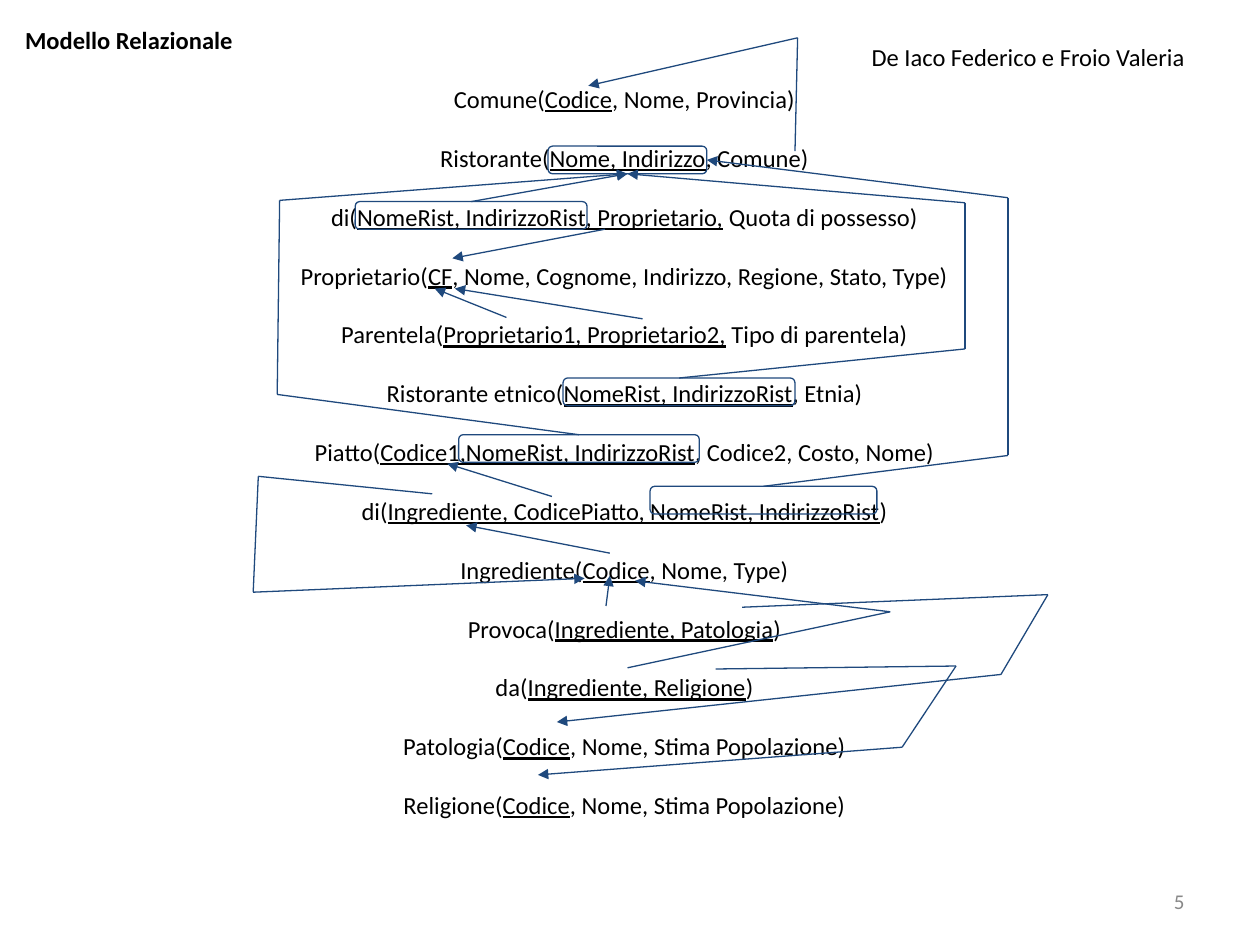
from dataclasses import dataclass
from typing import Optional

import pptx
import pptx.dml.color
import pptx.enum.shapes
import pptx.enum.text
import pptx.oxml
import pptx.oxml.ns
import pptx.util
from pptx.util import Pt

FONT = "Calibri"
INK = "1F497D"
LINE_WIDTH = 0.75
KEY_HEIGHT = 15.8
TOP, BOTTOM, RIGHT = 0, 2, 3
ALIGN = pptx.enum.text.PP_ALIGN
ANCHOR = pptx.enum.text.MSO_ANCHOR


@dataclass
class Relation:
    name: str
    key: str
    rest: str


@dataclass
class KeyFrame:
    left: float
    top: float
    width: float


@dataclass
class Reference:
    """A foreign key path; a frame name and site glue the path to a key frame."""
    points: list
    source: Optional[str] = None
    target: Optional[str] = None
    target_site: int = BOTTOM


RELATIONS = [
    Relation("Comune(", "Codice", ", Nome, Provincia)"),
    Relation("Ristorante(", "Nome, Indirizzo", ", Comune)"),
    Relation("di(", "NomeRist, IndirizzoRist, Proprietario,", " Quota di possesso)"),
    Relation("Proprietario(", "CF", ", Nome, Cognome, Indirizzo, Regione, Stato, Type)"),
    Relation("Parentela(", "Proprietario1, Proprietario2,", " Tipo di parentela)"),
    Relation("Ristorante etnico(", "NomeRist, IndirizzoRist", ", Etnia)"),
    Relation("Piatto(", "Codice1,NomeRist, IndirizzoRist", ", Codice2, Costo, Nome)"),
    Relation("di(", "Ingrediente, CodicePiatto, NomeRist, IndirizzoRist", ")"),
    Relation("Ingrediente(", "Codice", ", Nome, Type)"),
    Relation("Provoca(", "Ingrediente, Patologia", ")"),
    Relation("da(", "Ingrediente, Religione", ")"),
    Relation("Patologia(", "Codice", ", Nome, Stima Popolazione)"),
    Relation("Religione(", "Codice", ", Nome, Stima Popolazione)"),
]

KEY_FRAMES = {
    "ristorante": KeyFrame(313.2, 83.5, 90.7),
    "possesso": KeyFrame(203, 115.2, 132.5),
    "etnico": KeyFrame(321.8, 216, 132.5),
    "piatto": KeyFrame(262.1, 248.4, 137.5),
    "composizione": KeyFrame(371.5, 277.9, 129.6),
}

REFERENCES = [
    # Between single attributes
    Reference([(454.3, 86.4), (455.8, 21.6), (336.2, 49)]),
    Reference([(345.6, 131), (258.5, 147.6)]),
    Reference([(289.4, 181.4), (248.4, 164.9)]),
    Reference([(367.2, 182.2), (259.9, 164.9)]),
    Reference([(315.4, 283.7), (255.6, 265)]),
    Reference([(348.5, 316.1), (266.4, 300.2)]),
    Reference([(247, 282.2), (147.6, 272.2), (144.7, 338.4), (334.1, 330.5)]),
    Reference([(346.3, 346.3), (348.5, 329)]),
    Reference([(358.6, 381.6), (508.7, 349.6), (362.9, 331.9)]),
    Reference([(424.1, 347), (598.8, 339.8), (572, 385.4), (318.2, 412.6)]),
    Reference([(409, 382.3), (546.3, 380.6), (515.5, 427), (307.4, 442.8)]),
    # From framed keys to the restaurant key
    Reference([(269.3, 115.2), (358.6, 99.3)], "possesso", "ristorante"),
    Reference([(388.1, 216), (551.5, 199.4), (551.5, 115.9), (358.6, 99.3)],
              "etnico", "ristorante"),
    Reference([(330.9, 248.4), (158.4, 225.4), (159.8, 114.5), (358.6, 99.3)],
              "piatto", "ristorante"),
    Reference([(436.3, 277.9), (576, 260.3), (576, 113), (403.9, 91.4)],
              "composizione", "ristorante", RIGHT),
]


def color(hex_value: str) -> pptx.dml.color.RGBColor:
    return pptx.dml.color.RGBColor.from_string(hex_value)


def add_text_frame(slide, left: float, top: float, width: float, height: float,
                   inset: float = 7.2, anchor=ANCHOR.TOP):
    frame = slide.shapes.add_textbox(Pt(left), Pt(top), Pt(width), Pt(height)).text_frame
    frame.word_wrap = True
    frame.vertical_anchor = anchor
    frame.margin_left = frame.margin_right = Pt(7.2)
    frame.margin_top = frame.margin_bottom = Pt(inset)
    return frame


def style(paragraph, align=ALIGN.LEFT, size: float = 14, bold: bool = False,
          hex_value: str = "000000") -> None:
    paragraph.alignment = align
    paragraph.font.name = FONT
    paragraph.font.size = Pt(size)
    paragraph.font.bold = bold
    paragraph.font.color.rgb = color(hex_value)


def add_relation(frame, relation: Relation) -> None:
    paragraph = frame.add_paragraph()
    style(paragraph, ALIGN.CENTER)
    paragraph.space_before = Pt(16.8)
    for wording in (relation.name, relation.key, relation.rest):
        run = paragraph.add_run()
        run.text = wording
        if wording is relation.key:
            run.font.underline = True


def add_key_frame(slide, key: KeyFrame):
    outline = slide.shapes.add_shape(
        pptx.enum.shapes.MSO_SHAPE.ROUNDED_RECTANGLE,
        Pt(key.left), Pt(key.top), Pt(key.width), Pt(KEY_HEIGHT))
    outline.shadow.inherit = False
    outline.fill.background()
    outline.line.color.rgb = color(INK)
    outline.line.width = Pt(LINE_WIDTH)
    return outline


def add_segment(slide, start: tuple, end: tuple, arrow: bool):
    segment = slide.shapes.add_connector(
        pptx.enum.shapes.MSO_CONNECTOR.STRAIGHT, *(Pt(value) for value in start + end))
    segment.line.color.rgb = color(INK)
    segment.line.width = Pt(LINE_WIDTH)
    if arrow:
        head = pptx.oxml.parse_xml(
            f'<a:tailEnd {pptx.oxml.ns.nsdecls("a")} type="triangle"/>')
        segment.line._get_or_add_ln().append(head)
    segment._element.spPr.append(
        pptx.oxml.parse_xml(f'<a:effectLst {pptx.oxml.ns.nsdecls("a")}/>'))
    return segment


def add_reference(slide, reference: Reference, outlines: dict) -> None:
    points = reference.points
    last = len(points) - 2
    segments = [add_segment(slide, start, end, index == last)
                for index, (start, end) in enumerate(zip(points, points[1:]))]
    if reference.source:
        segments[0].begin_connect(outlines[reference.source], TOP)
    if reference.target:
        segments[-1].end_connect(outlines[reference.target], reference.target_site)


def main() -> None:
    deck = pptx.Presentation()
    deck.slide_width, deck.slide_height = Pt(720), Pt(540)
    slide = deck.slides.add_slide(deck.slide_layouts[6])

    # Page number
    page = add_text_frame(slide, 516, 500.5, 168, 28.8, 3.6, ANCHOR.MIDDLE).paragraphs[0]
    page.text = "5"
    style(page, ALIGN.RIGHT, 12, hex_value="888888")

    # Title and relations
    schema = add_text_frame(slide, 7.2, 7.2, 699.1, 522)
    title = schema.paragraphs[0]
    title.text = "Modello Relazionale"
    style(title, bold=True)
    for relation in RELATIONS:
        add_relation(schema, relation)

    # Framed keys and references
    outlines = {name: add_key_frame(slide, key) for name, key in KEY_FRAMES.items()}
    for reference in REFERENCES:
        add_reference(slide, reference, outlines)

    # Authors
    authors = add_text_frame(slide, 491, 16.6, 201.6, 28.8).paragraphs[0]
    authors.text = "De Iaco Federico e Froio Valeria"
    style(authors)

    deck.save("out.pptx")


if __name__ == "__main__":
    main()
